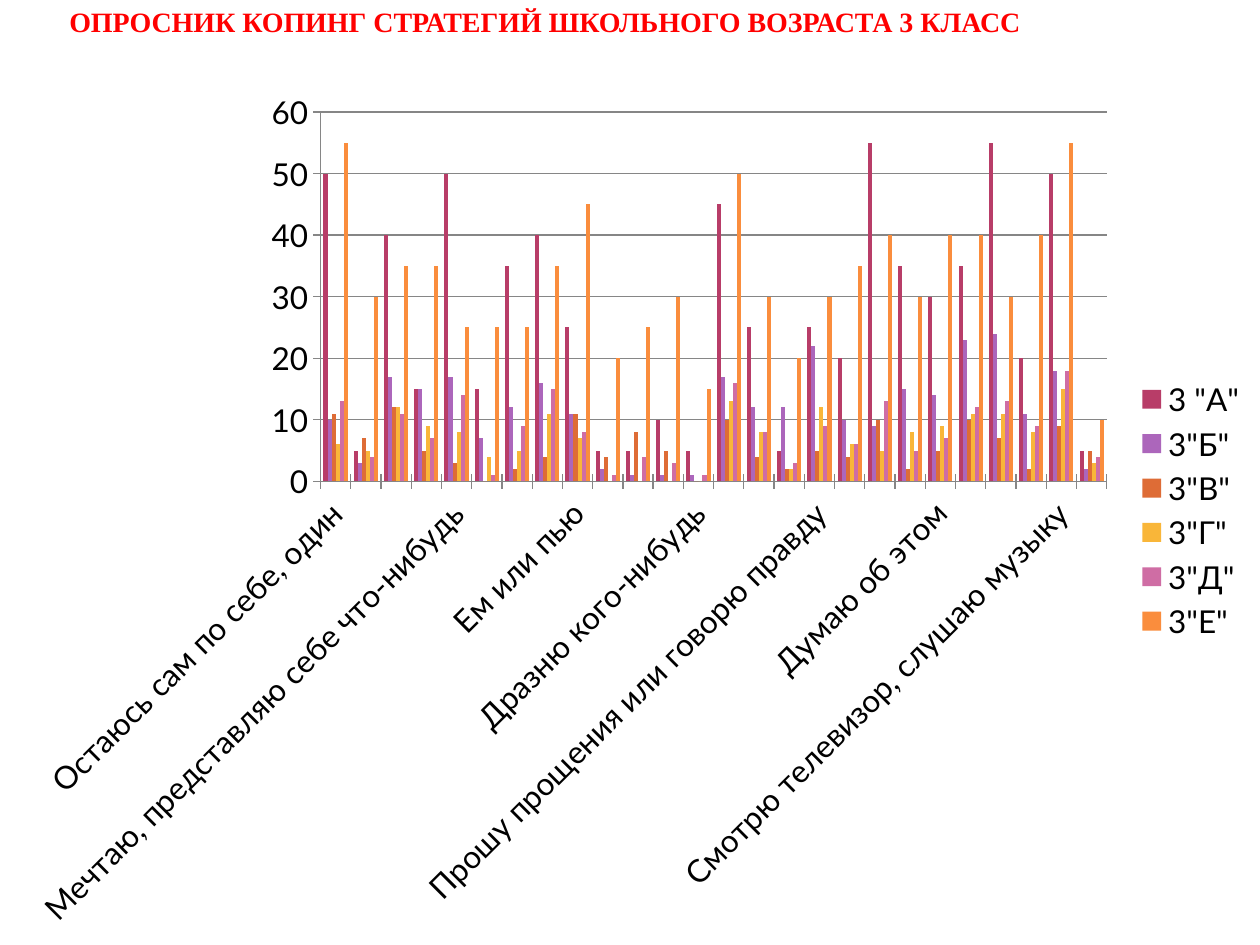
from pptx import Presentation
from pptx.chart.data import CategoryChartData
from pptx.dml.color import RGBColor
from pptx.enum.chart import XL_CHART_TYPE, XL_LEGEND_POSITION, XL_TICK_MARK
from pptx.enum.text import MSO_ANCHOR
from pptx.util import Inches, Pt

CLUSTERED = XL_CHART_TYPE.COLUMN_CLUSTERED
LEGEND_RIGHT = XL_LEGEND_POSITION.RIGHT
TICK_CROSS = XL_TICK_MARK.CROSS
TICK_NONE = XL_TICK_MARK.NONE
ANCHOR_BOTTOM = MSO_ANCHOR.BOTTOM

WIDTH, HEIGHT = Inches(10), Inches(7.5)
TITLE_BOX = (0.05, 0, 0.79, 0.04)
CHART_BOX = (0, 0.08, 1, 0.92)
AXIS_GRAY = "868686"

STRATEGIES = [
    "Остаюсь сам по себе, один",
    "Кусаю ногти или ломаю суставы пальцев",
    "Обнимаю или прижимаю к себе кого-то близкого, любимую вещь или глажу животное",
    "Плачу и грущу",
    "Мечтаю, представляю себе что-нибудь",
    "Делаю что-то подобное",
    "Гуляю вокруг дома или по улице",
    "Рисую, пишу или читаю что-нибудь",
    "Ем или пью",
    "Борюсь или дерусь с кем-нибудь",
    "Схожу с ума",
    "Бью, ломаю или швыряю вещи",
    "Дразню кого-нибудь",
    "Играю во что-нибудь",
    "Бегаю или хожу пешком",
    "Молюсь",
    "Прошу прощения или говорю правду",
    "Сплю",
    "Говорю сам с собой",
    "Говорю с кем-нибудь",
    "Думаю об этом",
    "Стараюсь забыть",
    "Стараюсь расслабиться, оставаться спокойным",
    "Гуляю, бегаю, катаюсь на велосипеде",
    "Смотрю телевизор, слушаю музыку",
    "Воплю и кричу",
]

CLASSES = [
    ('3 "А"', "B83D68", [50, 5, 40, 15, 50, 15, 35, 40, 25, 5, 5, 10, 5,
                         45, 25, 5, 25, 20, 55, 35, 30, 35, 55, 20, 50, 5]),
    ('3"Б"', "AC66BB", [10, 3, 17, 15, 17, 7, 12, 16, 11, 2, 1, 1, 1,
                        17, 12, 12, 22, 10, 9, 15, 14, 23, 24, 11, 18, 2]),
    ('3"В"', "DE6C36", [11, 7, 12, 5, 3, 0, 2, 4, 11, 4, 8, 5, 0,
                        10, 4, 2, 5, 4, 10, 2, 5, 10, 7, 2, 9, 5]),
    ('3"Г"', "F9B639", [6, 5, 12, 9, 8, 4, 5, 11, 7, 0, 0, 0, 0,
                        13, 8, 2, 12, 6, 5, 8, 9, 11, 11, 8, 15, 3]),
    ('3"Д"', "CF6DA4", [13, 4, 11, 7, 14, 1, 9, 15, 8, 1, 4, 3, 1,
                        16, 8, 3, 9, 6, 13, 5, 7, 12, 13, 9, 18, 4]),
    ('3"Е"', "FA8D3D", [55, 30, 35, 35, 25, 25, 25, 35, 45, 20, 25, 30, 15,
                        50, 30, 20, 30, 35, 40, 30, 40, 40, 30, 40, 55, 10]),
]


def color(value):
    return RGBColor.from_string(value)


def place(box):
    left, top, width, height = box
    return (int(left * WIDTH), int(top * HEIGHT),
            int(width * WIDTH), int(height * HEIGHT))


def add_title(slide, box, text):
    frame = slide.shapes.add_textbox(*place(box)).text_frame
    frame.word_wrap = True
    frame.vertical_anchor = ANCHOR_BOTTOM
    frame.margin_left = frame.margin_right = Inches(0.05)
    frame.margin_top = frame.margin_bottom = 0
    run = frame.paragraphs[0].add_run()
    run.text = text
    run.font.name = "Times New Roman"
    run.font.size = Pt(16)
    run.font.bold = True
    run.font.color.rgb = color("FF0000")


def style_line(line):
    line.color.rgb = color(AXIS_GRAY)
    line.width = Pt(0.75)


def add_strategy_chart(slide, box):
    data = CategoryChartData()
    data.categories = STRATEGIES
    for name, _, values in CLASSES:
        data.add_series(name, values)
    chart = slide.shapes.add_chart(CLUSTERED, *place(box), data).chart
    chart.has_title = False
    chart.font.name = "Lato"
    chart.font.size = Pt(18)
    chart.font.color.rgb = color("000000")

    chart.has_legend = True
    chart.legend.position = LEGEND_RIGHT
    chart.legend.include_in_layout = False

    for axis in (chart.category_axis, chart.value_axis):
        axis.major_tick_mark = TICK_CROSS
        axis.minor_tick_mark = TICK_NONE
        style_line(axis.format.line)
    chart.value_axis.has_major_gridlines = True
    style_line(chart.value_axis.major_gridlines.format.line)

    plot = chart.plots[0]
    plot.vary_by_categories = False
    plot.gap_width = 150
    plot.overlap = 0
    for series, (_, fill_color, _) in zip(plot.series, CLASSES):
        series.format.fill.solid()
        series.format.fill.fore_color.rgb = color(fill_color)


def main():
    presentation = Presentation()
    presentation.slide_width, presentation.slide_height = WIDTH, HEIGHT
    slide = presentation.slides.add_slide(presentation.slide_layouts[6])
    add_title(slide, TITLE_BOX,
              "ОПРОСНИК КОПИНГ СТРАТЕГИЙ ШКОЛЬНОГО ВОЗРАСТА 3 КЛАСС")
    add_strategy_chart(slide, CHART_BOX)
    presentation.save("out.pptx")


if __name__ == "__main__":
    main()
